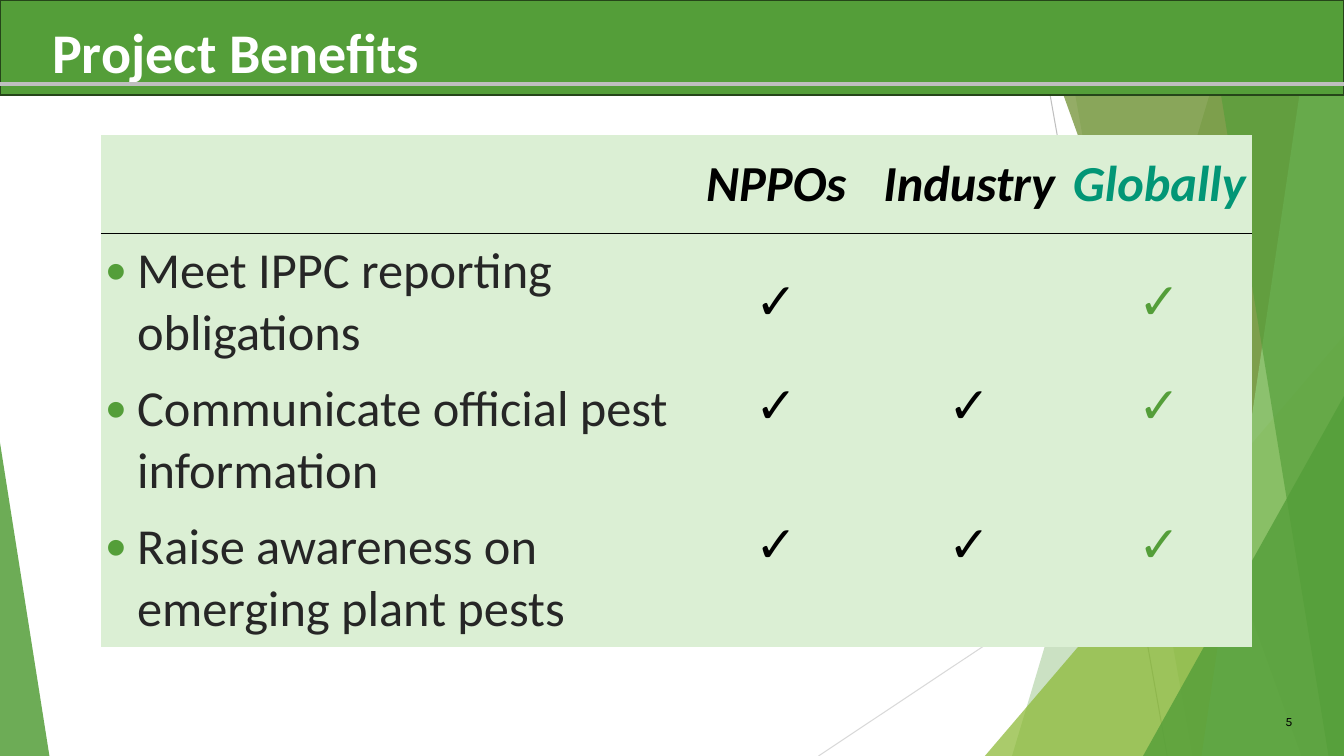
from dataclasses import dataclass

from lxml.etree import SubElement
from pptx import Presentation
from pptx.dml.color import RGBColor
from pptx.enum.shapes import MSO_CONNECTOR, MSO_SHAPE
from pptx.enum.text import MSO_ANCHOR, PP_ALIGN
from pptx.oxml import parse_xml
from pptx.oxml.ns import nsdecls, qn
from pptx.util import Emu, Inches, Pt

WIDE, HIGH = Inches(13.33), Inches(7.5)
INK = {
    "green": "549E39", "lime": "8AB833", "olive": "678A26", "mint": "93D07D",
    "pale": "DBEFD4", "teal": "029676", "dark": "254519", "gray": "BFBFBF",
    "light": "D9D9D9", "text": "262626", "black": "000000", "white": "FFFFFF",
}
FACE = "Calibri"


@dataclass
class Band:
    top: float
    foot: float
    ink: str
    alpha: int


@dataclass
class Wedge:
    left: float
    top: float
    width: float
    tip: float
    ink: str
    alpha: int


@dataclass
class Rule:
    start: tuple[float, float]
    end: tuple[float, float]
    ink: str
    weight: float


RULES = [
    Rule((76.88, 0), (86.85, 100), "gray", 0.75),
    Rule((100, 53.73), (60.9, 100), "light", 0.75),
]
SHARDS = [
    Band(92.1, 75.3, "green", 30),
    Band(78.75, 88.73, "green", 20),
    Wedge(73.28, 44.4, 26.72, 1, "lime", 72),
    Band(76.58, 96.83, "olive", 70),
    Band(97.73, 89.4, "mint", 70),
    Band(89.7, 98.85, "green", 65),
    Wedge(85.05, 52.4, 14.95, 1, "green", 80),
    Wedge(0, 58.53, 3.68, 0, "green", 85),
]
COLS = [43.13, 14.25, 14.48, 13.8]
ROWS = [13.07, 18.13, 18.27, 18.27]
HEADS = ["", "NPPOs", "Industry", "Globally"]
GAINS = [
    ("Meet IPPC reporting obligations", "✓", "", "✓"),
    ("Communicate official pest information", "✓", "✓", "✓"),
    ("Raise awareness on emerging plant pests", "✓", "✓", "✓"),
]


def across(share: float) -> Emu:
    return Emu(round(WIDE * share / 100))


def down(share: float) -> Emu:
    return Emu(round(HIGH * share / 100))


def tint(name: str) -> RGBColor:
    return RGBColor.from_string(INK[name])


def paint(shape, ink: str, alpha: int) -> None:
    shape.shadow.inherit = False
    shape.fill.solid()
    shape.fill.fore_color.rgb = tint(ink)
    shape.line.fill.background()
    color = shape.fill._xPr.find(qn("a:solidFill"))[0]
    SubElement(color, qn("a:alpha")).set("val", str(alpha * 1000))


def draw_band(slide, band: Band) -> None:
    pen = slide.shapes.build_freeform(across(band.top), 0)
    pen.add_line_segments([(WIDE, 0), (WIDE, HIGH), (across(band.foot), HIGH)])
    paint(pen.convert_to_shape(), band.ink, band.alpha)


def draw_wedge(slide, wedge: Wedge) -> None:
    shape = slide.shapes.add_shape(
        MSO_SHAPE.ISOSCELES_TRIANGLE, across(wedge.left), down(wedge.top),
        across(wedge.width), down(100 - wedge.top))
    shape.adjustments[0] = wedge.tip
    paint(shape, wedge.ink, wedge.alpha)


def draw_rule(slide, rule: Rule) -> None:
    line = slide.shapes.add_connector(
        MSO_CONNECTOR.STRAIGHT, across(rule.start[0]), down(rule.start[1]),
        across(rule.end[0]), down(rule.end[1]))
    line.line.color.rgb = tint(rule.ink)
    line.line.width = Pt(rule.weight)
    SubElement(line._element.spPr, qn("a:effectLst"))


def style(para, size: float, ink: str, face: str = FACE, bold: bool = False) -> None:
    para.font.name = face
    para.font.size = Pt(size)
    para.font.bold = bold
    para.font.color.rgb = tint(ink)


def add_text(slide, left: float, top: float, width: float, height: float, words: str):
    box = slide.shapes.add_textbox(across(left), down(top), across(width), down(height))
    box.text_frame.word_wrap = True
    para = box.text_frame.paragraphs[0]
    para.text = words
    return box.text_frame, para


def set_edges(cell, row: int) -> None:
    props = cell._tc.get_or_add_tcPr()
    ruled = {0: "lnB", 1: "lnT"}.get(row)
    for side in ("lnL", "lnR", "lnT", "lnB"):
        edge = SubElement(props, qn(f"a:{side}"))
        edge.set("w", str(Pt(1)))
        if side == ruled:
            fill = SubElement(edge, qn("a:solidFill"))
            SubElement(fill, qn("a:srgbClr")).set("val", INK["black"])
        else:
            SubElement(edge, qn("a:noFill"))


def set_bullet(para) -> None:
    props = para._p.get_or_add_pPr()
    props.set("marL", str(Inches(0.31)))
    props.set("indent", str(-Inches(0.31)))
    parts = [
        '<a:spcBef {}><a:spcPct val="20000"/></a:spcBef>',
        '<a:spcAft {}><a:spcPts val="600"/></a:spcAft>',
        '<a:buClr {}><a:srgbClr val="' + INK["green"] + '"/></a:buClr>',
        '<a:buSzPct {} val="115000"/>',
        '<a:buFont {} typeface="Arial"/>',
        '<a:buChar {} char="•"/>',
    ]
    for spot, part in enumerate(parts):
        props.insert(spot, parse_xml(part.format(nsdecls("a"))))


def fill_cell(cell, row: int, col: int, words: str) -> None:
    set_edges(cell, row)
    cell.fill.solid()
    cell.fill.fore_color.rgb = tint("pale")
    cell.margin_left = cell.margin_right = Inches(0.05)
    cell.margin_top = cell.margin_bottom = Inches(0.05)
    mark = row > 1 and col > 0
    cell.vertical_anchor = MSO_ANCHOR.TOP if mark else MSO_ANCHOR.MIDDLE
    if not words:
        return
    para = cell.text_frame.paragraphs[0]
    para.text = words
    last = "teal" if row == 0 else "green"
    ink = "text" if col == 0 else last if col == 3 else "black"
    style(para, 36, ink, bold=row == 0)
    para.font.italic = row == 0
    if col == 0:
        set_bullet(para)
    else:
        para.alignment = PP_ALIGN.CENTER


def draw_table(slide) -> None:
    grid = slide.shapes.add_table(
        len(ROWS), len(COLS), across(7.5), down(17.87),
        across(sum(COLS)), down(sum(ROWS))).table
    grid.first_row = grid.horz_banding = False
    for col, share in zip(grid.columns, COLS):
        col.width = across(share)
    for row, share in zip(grid.rows, ROWS):
        row.height = down(share)
    for row, line in enumerate([HEADS, *GAINS]):
        for col, words in enumerate(line):
            fill_cell(grid.cell(row, col), row, col, words)


def draw_title(slide) -> None:
    bar = slide.shapes.add_shape(MSO_SHAPE.RECTANGLE, 0, 0, WIDE, down(12.53))
    paint(bar, "green", 100)
    bar.line.color.rgb = tint("dark")
    bar.line.width = Pt(1.5)
    _, para = add_text(slide, 3.15, 2.67, 90, 12.93, "Project Benefits")
    para.line_spacing = 0.9
    style(para, 40, "white", bold=True)
    draw_rule(slide, Rule((0, 11.07), (100, 11.07), "gray", 3))


def main() -> None:
    deck = Presentation()
    deck.slide_width, deck.slide_height = WIDE, HIGH
    slide = deck.slides.add_slide(deck.slide_layouts[6])
    for rule in RULES:
        draw_rule(slide, rule)
    for shard in SHARDS:
        if isinstance(shard, Band):
            draw_band(slide, shard)
        else:
            draw_wedge(slide, shard)
    frame, para = add_text(slide, 92.48, 93.33, 4.43, 4.13, "5")
    frame.vertical_anchor = MSO_ANCHOR.MIDDLE
    para.alignment = PP_ALIGN.RIGHT
    style(para, 9, "black", "Karla")
    draw_table(slide)
    draw_title(slide)
    deck.save("out.pptx")


if __name__ == "__main__":
    main()
